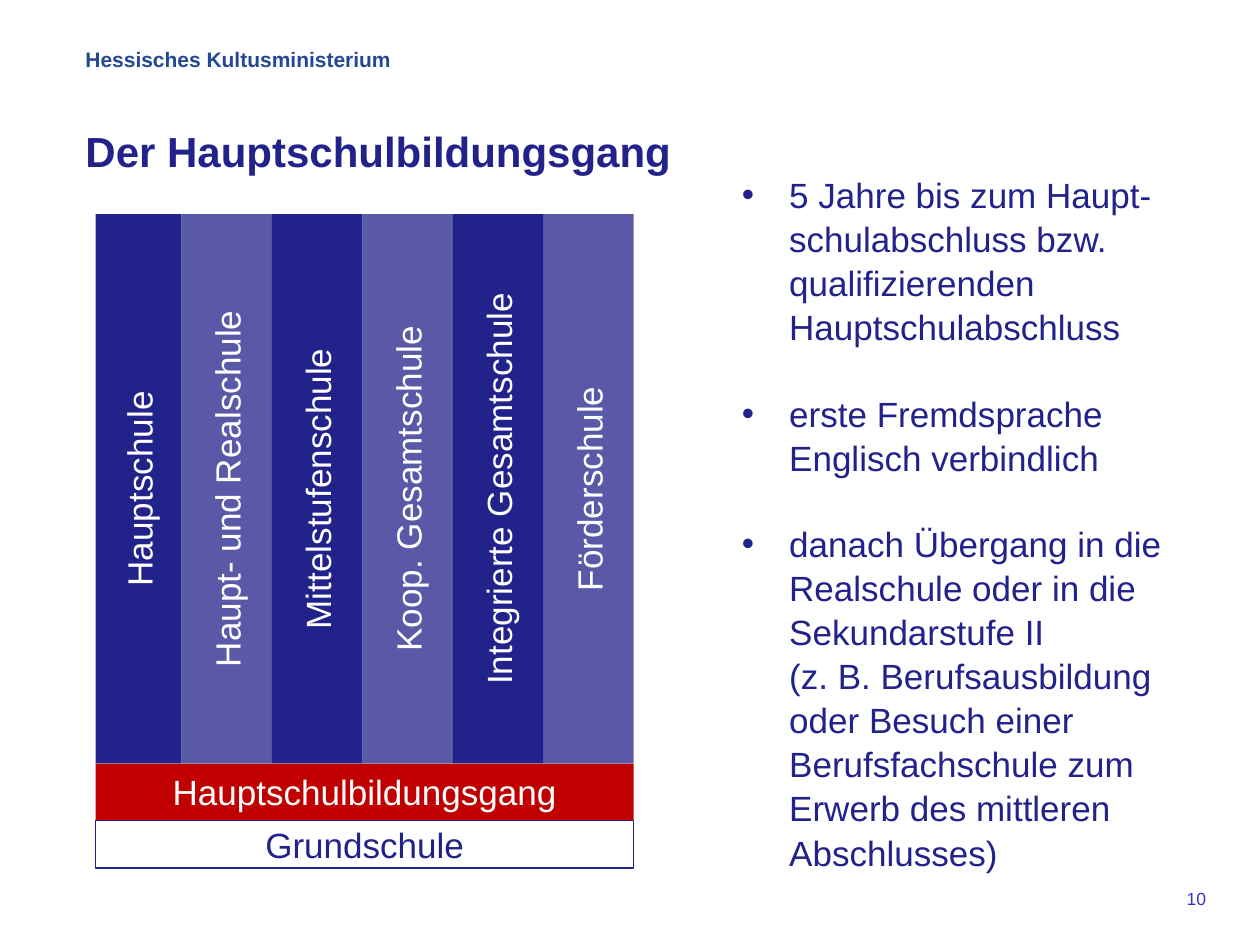
import pptx
import pptx.util
import pptx.dml.color
import pptx.enum.shapes
import pptx.enum.text
import pptx.oxml
import pptx.oxml.ns
from lxml import etree

RGBColor = pptx.dml.color.RGBColor
ALIGN = pptx.enum.text.PP_ALIGN
ANCHOR = pptx.enum.text.MSO_ANCHOR
Pt = pptx.util.Pt

NAVY = RGBColor(0x22, 0x22, 0x8B)
RED = RGBColor(0xC0, 0x00, 0x00)
WHITE = RGBColor(0xFF, 0xFF, 0xFF)
HEADER_BLUE = RGBColor(0x24, 0x48, 0x94)
NUMBER_BLUE = RGBColor(0x33, 0x33, 0xCC)

prs = pptx.Presentation()
prs.slide_width = pptx.util.Inches(10)
prs.slide_height = pptx.util.Inches(7.5)
slide = prs.slides.add_slide(prs.slide_layouts[6])

# Grid: 100 columns by 75 rows
COL = prs.slide_width / 100
ROW = prs.slide_height / 75


def add_box(shapes, x, y, w, h, fill=None, line=None, line_width=0.75, anchor=ANCHOR.MIDDLE):
    at = [int(v) for v in (x * COL, y * ROW, w * COL, h * ROW)]
    if fill is None:
        sp = shapes.add_textbox(*at)
    else:
        sp = shapes.add_shape(pptx.enum.shapes.MSO_SHAPE.RECTANGLE, *at)
        sp.shadow.inherit = False
        sp.fill.solid()
        sp.fill.fore_color.rgb = fill
        if line is None:
            sp.line.fill.background()
        else:
            sp.line.color.rgb = line
            sp.line.width = Pt(line_width)
    sp.text_frame.word_wrap = True
    sp.text_frame.vertical_anchor = anchor
    return sp


def add_run(p, text, size, color, bold=False, align=ALIGN.LEFT):
    p.alignment = align
    r = p.add_run()
    r.text = text
    r.font.name = "Arial"
    r.font.size = Pt(size)
    r.font.bold = bold
    r.font.color.rgb = color


# Header, title and page number
for text, at, size, color, bold, align, anchor in (
    ("Hessisches Kultusministerium", (5.8, 3.2, 31.7, 5), 12, HEADER_BLUE, True, ALIGN.LEFT, ANCHOR.TOP),
    ("Der Hauptschulbildungsgang", (5.8, 9.2, 85, 5.5), 24, NAVY, True, ALIGN.LEFT, ANCHOR.MIDDLE),
    ("10", (71.7, 70, 25, 3.3), 10, NUMBER_BLUE, False, ALIGN.RIGHT, ANCHOR.TOP),
):
    sp = add_box(slide.shapes, *at, anchor=anchor)
    add_run(sp.text_frame.paragraphs[0], text, size, color, bold, align)

# Bullet list
POINTS = (
    ("5 Jahre bis zum Haupt-schulabschluss bzw. qualifizierenden Hauptschulabschluss",),
    ("erste Fremdsprache Englisch verbindlich",),
    ("danach Übergang in die Realschule oder in die Sekundarstufe II",
     "(z. B. Berufsausbildung oder Besuch einer Berufsfachschule zum Erwerb des mittleren Abschlusses)"),
)
tf = add_box(slide.shapes, 57.9, 14.7, 38.6, 53.5, WHITE, WHITE, 3).text_frame
for i, parts in enumerate(POINTS):
    p = tf.add_paragraph() if i else tf.paragraphs[0]
    p.line_spacing = 1.05
    if i:
        p.space_before = Pt(24)
    pPr = p._p.get_or_add_pPr()
    pPr.set("marL", str(int(3.75 * COL)))
    pPr.set("indent", str(int(-3.75 * COL)))
    etree.SubElement(pPr, pptx.oxml.ns.qn("a:buFont")).set("typeface", "Arial")
    etree.SubElement(pPr, pptx.oxml.ns.qn("a:buChar")).set("char", "•")
    for j, part in enumerate(parts):
        if j:
            p.add_line_break()
        add_run(p, part, 20, NAVY)

# School diagram: base bars below, school types as pillars above
LEFT, WIDTH = 7.6, 42.7
diagram = slide.shapes.add_group_shape().shapes
for text, top, height, fill, line, color in (
    ("Grundschule", 65.1, 3.8, WHITE, NAVY, NAVY),
    ("Hauptschulbildungsgang", 60.6, 4.5, RED, None, WHITE),
):
    sp = add_box(diagram, LEFT, top, WIDTH, height, fill, line)
    add_run(sp.text_frame.paragraphs[0], text, 20, color, align=ALIGN.CENTER)

SCHOOLS = ("Hauptschule", "Haupt- und Realschule", "Mittelstufenschule",
           "Koop. Gesamtschule", "Integrierte Gesamtschule", "Förderschule")
FIRST = 6.8
PILLAR = (WIDTH - FIRST) / (len(SCHOOLS) - 1)
for i, school in enumerate(SCHOOLS):
    x = LEFT + FIRST + (i - 1) * PILLAR if i else LEFT
    sp = add_box(diagram, x, 17, PILLAR if i else FIRST, 43.6, NAVY)
    if i % 2:  # every second pillar is 75 % opaque
        clr = sp.fill._xPr.find(".//" + pptx.oxml.ns.qn("a:srgbClr"))
        etree.SubElement(clr, pptx.oxml.ns.qn("a:alpha")).set("val", "75000")
    sp.text_frame._txBody.bodyPr.set("vert", "vert270")
    add_run(sp.text_frame.paragraphs[0], school, 20, WHITE, align=ALIGN.CENTER)

prs.save("out.pptx")
